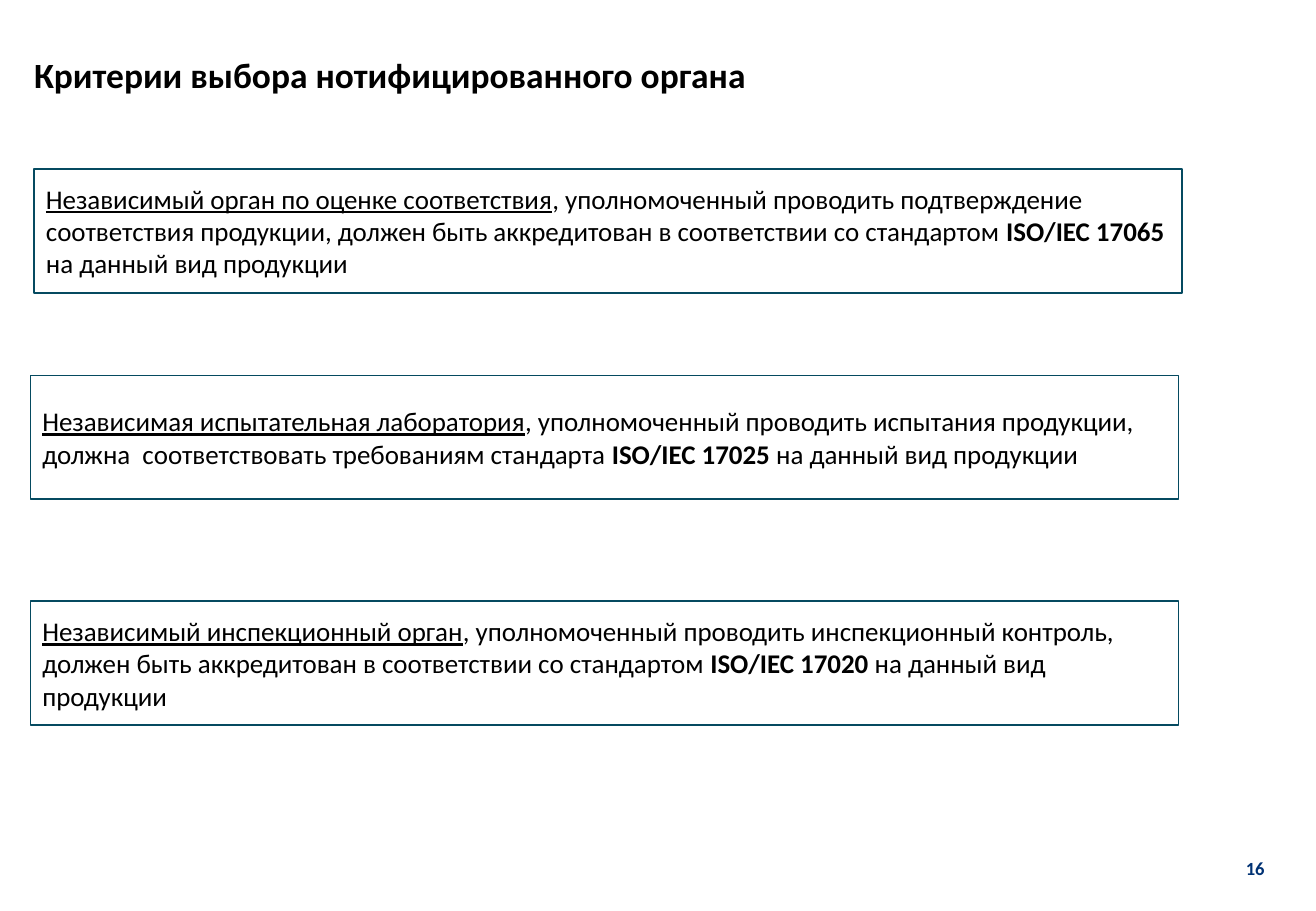
from dataclasses import dataclass

from pptx import Presentation
from pptx.dml.color import RGBColor
from pptx.enum.shapes import MSO_SHAPE
from pptx.enum.text import MSO_ANCHOR, PP_ALIGN
from pptx.text.text import TextFrame, _Paragraph
from pptx.util import Inches, Pt

BLACK, WHITE, TEAL, NAVY = "000000", "FFFFFF", "054A60", "003274"


@dataclass
class Rule:
    left: float
    top: float
    body: str
    duty: str
    norm: str


RULES = [
    Rule(0.28, 1.39, "Независимый орган по оценке соответствия",
         ", уполномоченный проводить подтверждение соответствия продукции, "
         "должен быть аккредитован в соответствии со стандартом ",
         "ISO/IEC 17065 "),
    Rule(0.25, 3.09, "Независимая испытательная лаборатория",
         ", уполномоченный проводить испытания продукции, "
         "должна  соответствовать требованиям стандарта ",
         "ISO/IEC 17025 "),
    Rule(0.25, 4.95, "Независимый инспекционный орган",
         ", уполномоченный проводить инспекционный контроль, "
         "должен быть аккредитован в соответствии со стандартом ",
         "ISO/IEC 17020 "),
]


def color(code: str) -> RGBColor:
    return RGBColor.from_string(code)


def write(para: _Paragraph, text: str, *, size: float = 16, ink: str = BLACK,
          bold: bool = False, under: bool = False) -> None:
    run = para.add_run()
    run.text = text
    font = run.font
    font.name, font.size = "Calibri", Pt(size)
    font.bold, font.underline = bold, under
    font.color.rgb = color(ink)


def label(slide, left: float, top: float, width: float, height: float) -> TextFrame:
    box = slide.shapes.add_textbox(
        Inches(left), Inches(top), Inches(width), Inches(height))
    return box.text_frame


def panel(slide, rule: Rule) -> None:
    box = slide.shapes.add_shape(
        MSO_SHAPE.RECTANGLE, Inches(rule.left), Inches(rule.top),
        Inches(9.45), Inches(1.02))
    box.shadow.inherit = False
    box.fill.solid()
    box.fill.fore_color.rgb = color(WHITE)
    box.line.color.rgb = color(TEAL)
    box.line.width = Pt(1)
    frame = box.text_frame
    frame.word_wrap = True
    frame.vertical_anchor = MSO_ANCHOR.MIDDLE
    para = frame.paragraphs[0]
    para.alignment = PP_ALIGN.LEFT
    write(para, rule.body, under=True)
    write(para, rule.duty)
    write(para, rule.norm, bold=True)
    write(para, "на данный вид продукции")


def main() -> None:
    deck = Presentation()
    deck.slide_width, deck.slide_height = Inches(10.83), Inches(7.5)
    slide = deck.slides.add_slide(deck.slide_layouts[6])

    # Title
    title = label(slide, 0.28, 0.48, 9.52, 0.33)
    title.word_wrap = True
    title.margin_left = title.margin_right = 0
    title.margin_top = title.margin_bottom = 0
    para = title.paragraphs[0]
    para.line_spacing = 0.9
    write(para, "Критерии выбора нотифицированного органа", size=21, bold=True)

    # Criteria
    for rule in RULES:
        panel(slide, rule)

    # Page number
    page = label(slide, 10.11, 6.86, 0.44, 0.58)
    page.word_wrap = False
    page.vertical_anchor = MSO_ANCHOR.MIDDLE
    para = page.paragraphs[0]
    para.alignment = PP_ALIGN.CENTER
    write(para, "16", size=11, ink=NAVY, bold=True)

    deck.save("out.pptx")


if __name__ == "__main__":
    main()
